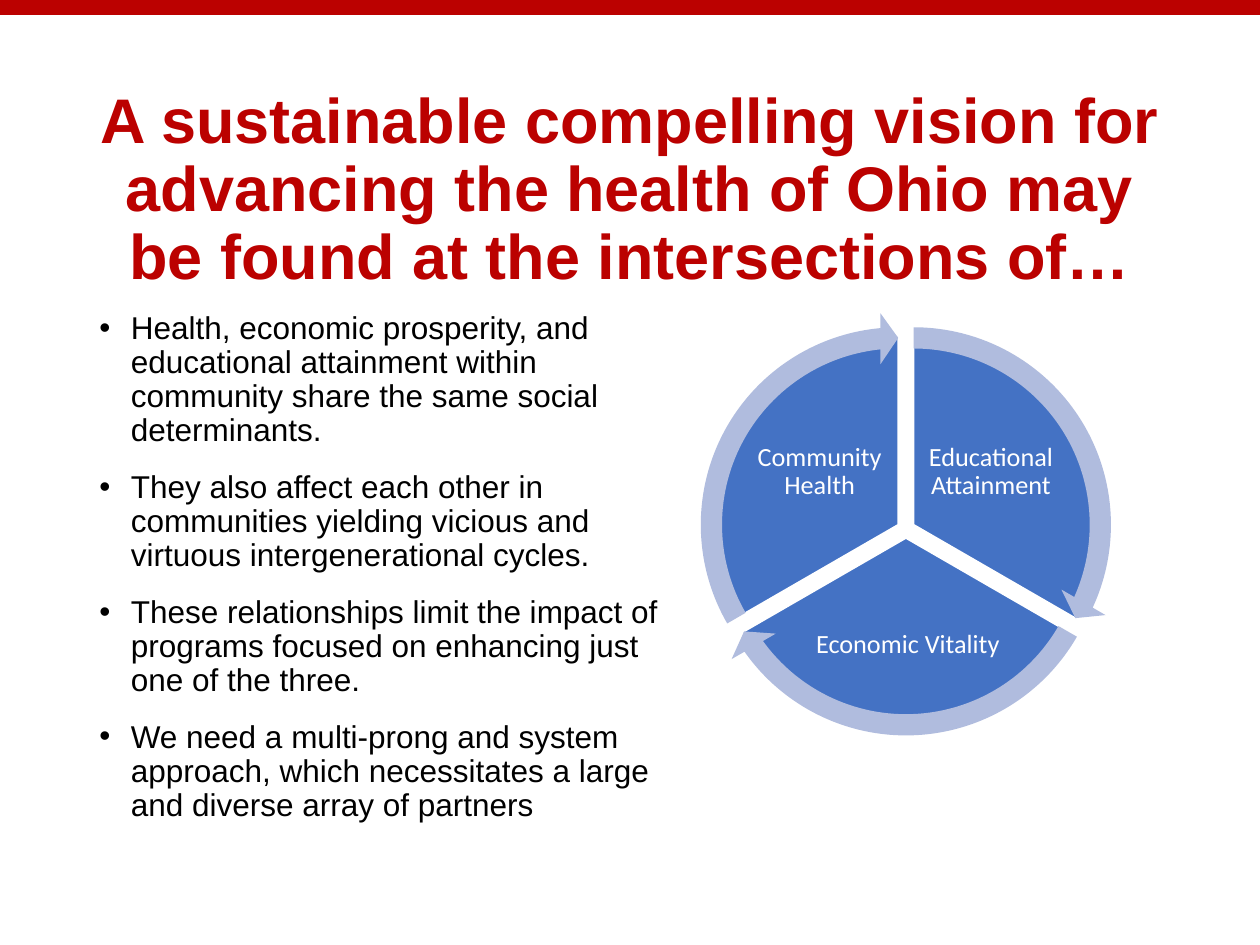
from math import cos, radians, sin

from lxml import etree
from pptx import Presentation
from pptx.dml.color import RGBColor
from pptx.enum.shapes import MSO_CONNECTOR, MSO_SHAPE
from pptx.enum.text import MSO_ANCHOR, PP_ALIGN
from pptx.oxml.ns import qn
from pptx.util import Inches, Pt

STRAIGHT = MSO_CONNECTOR.STRAIGHT
PIE, CIRCULAR_ARROW = MSO_SHAPE.PIE, MSO_SHAPE.CIRCULAR_ARROW
TOP, MIDDLE = MSO_ANCHOR.TOP, MSO_ANCHOR.MIDDLE
LEFT, CENTER = PP_ALIGN.LEFT, PP_ALIGN.CENTER

COLORS = {"red": "BB0100", "black": "000000", "white": "FFFFFF",
          "sector": "4472C4", "arrow": "B0BCDE"}
FORMATS = {
    "title": {"name": "Arial", "size": Pt(36), "bold": True},
    "body": {"name": "Arial", "size": Pt(18)},
    "label": {"name": "Calibri", "size": Pt(15)},
}
DEGREE = 0.6  # adjustment units per degree


def color(name):
    return RGBColor.from_string(COLORS[name])


def add_text(box, lines, style, ink, align, anchor, inset):
    """Place a text box and return its paragraphs."""
    frame = slide.shapes.add_textbox(*map(Inches, box)).text_frame
    settings = {"word_wrap": True, "vertical_anchor": anchor}
    for side in ("left", "right", "top", "bottom"):
        settings["margin_" + side] = Inches(inset[side in ("top", "bottom")])
    for name, value in settings.items():
        setattr(frame, name, value)
    frame.text = "\n".join(lines)
    for paragraph in frame.paragraphs:
        paragraph.alignment = align
        paragraph.line_spacing = 0.9
        font = paragraph.runs[0].font
        font.color.rgb = color(ink)
        for name, value in FORMATS[style].items():
            setattr(font, name, value)
    return frame.paragraphs


presentation = Presentation()
presentation.slide_width, presentation.slide_height = Inches(10), Inches(7.5)
slide = presentation.slides.add_slide(presentation.slide_layouts[6])

# Red band along the top edge
band = slide.shapes.add_connector(
    STRAIGHT, 0, Inches(0.06), presentation.slide_width, Inches(0.06))
band.line.color.rgb = color("red")
band.line.width = Pt(9)
etree.SubElement(band.element.spPr, qn("a:effectLst"))

# Title
add_text((0.69, 0.66, 8.62, 1.07),
         ["A sustainable compelling vision for advancing the health of Ohio "
          "may be found at the intersections of…"],
         "title", "red", CENTER, TOP, (0.09, 0.05))

# Bulleted argument
points = [
    "Health, economic prosperity, and educational attainment within community "
    "share the same social determinants.",
    "They also affect each other in communities yielding vicious and virtuous "
    "intergenerational cycles.",
    "These relationships limit the impact of programs focused on enhancing "
    "just one of the three.",
    "We need a multi-prong and system approach, which necessitates a large "
    "and diverse array of partners",
]
paragraphs = add_text((0.69, 2.43, 4.75, 3.36), points, "body", "black",
                      LEFT, TOP, (0.1, 0.05))
for index, paragraph in enumerate(paragraphs):
    paragraph.space_before = Pt(10 if index else 0)
    paragraph.space_after = Pt(3)
    properties = paragraph._p.get_or_add_pPr()
    properties.set("marL", str(Inches(0.25)))
    properties.set("indent", str(Inches(-0.25)))
    etree.SubElement(properties, qn("a:buFont")).set("typeface", "Arial")
    etree.SubElement(properties, qn("a:buChar")).set("char", "•")

# Wheel: three sectors pushed outward, each with its label and arrow
CENTER_X, CENTER_Y, PUSH = 7.19, 4.2, 0.07
SWEEP, ARROW_SWEEP, HEAD = 120, 114.54, 5.46
sectors = [  # start angle, label, label box
    (270, "Educational Attainment", (7.33, 3.3, 1.07, 0.89)),
    (30, "Economic Vitality", (6.4, 4.72, 1.61, 0.79)),
    (150, "Community Health", (5.97, 3.3, 1.07, 0.89)),
]
rings = [(PIE, 3, "sector"), (CIRCULAR_ARROW, 3.37, "arrow")]
for kind, diameter, fill in rings:
    for start, label, label_box in sectors:
        middle = radians(start + SWEEP / 2)
        left = CENTER_X + PUSH * cos(middle) - diameter / 2
        top = CENTER_Y + PUSH * sin(middle) - diameter / 2
        shape = slide.shapes.add_shape(
            kind, *map(Inches, (left, top, diameter, diameter)))
        shape.shadow.inherit = False
        shape.fill.solid()
        shape.fill.fore_color.rgb = color(fill)
        if kind == PIE:
            angles = [start, (start + SWEEP) % 360]
            adjustments = [angle * DEGREE for angle in angles]
            shape.line.color.rgb = color("white")
            shape.line.width = Pt(1)
            add_text(label_box, [label], "label", "white", CENTER, MIDDLE,
                     (0.02, 0.02))
        else:
            end = (start + ARROW_SWEEP) % 360
            adjustments = [0.05, HEAD * DEGREE, end * DEGREE,
                           start * DEGREE, 0.06]
            shape.line.fill.background()
        for index, value in enumerate(adjustments):
            shape.adjustments[index] = value

presentation.save("out.pptx")
